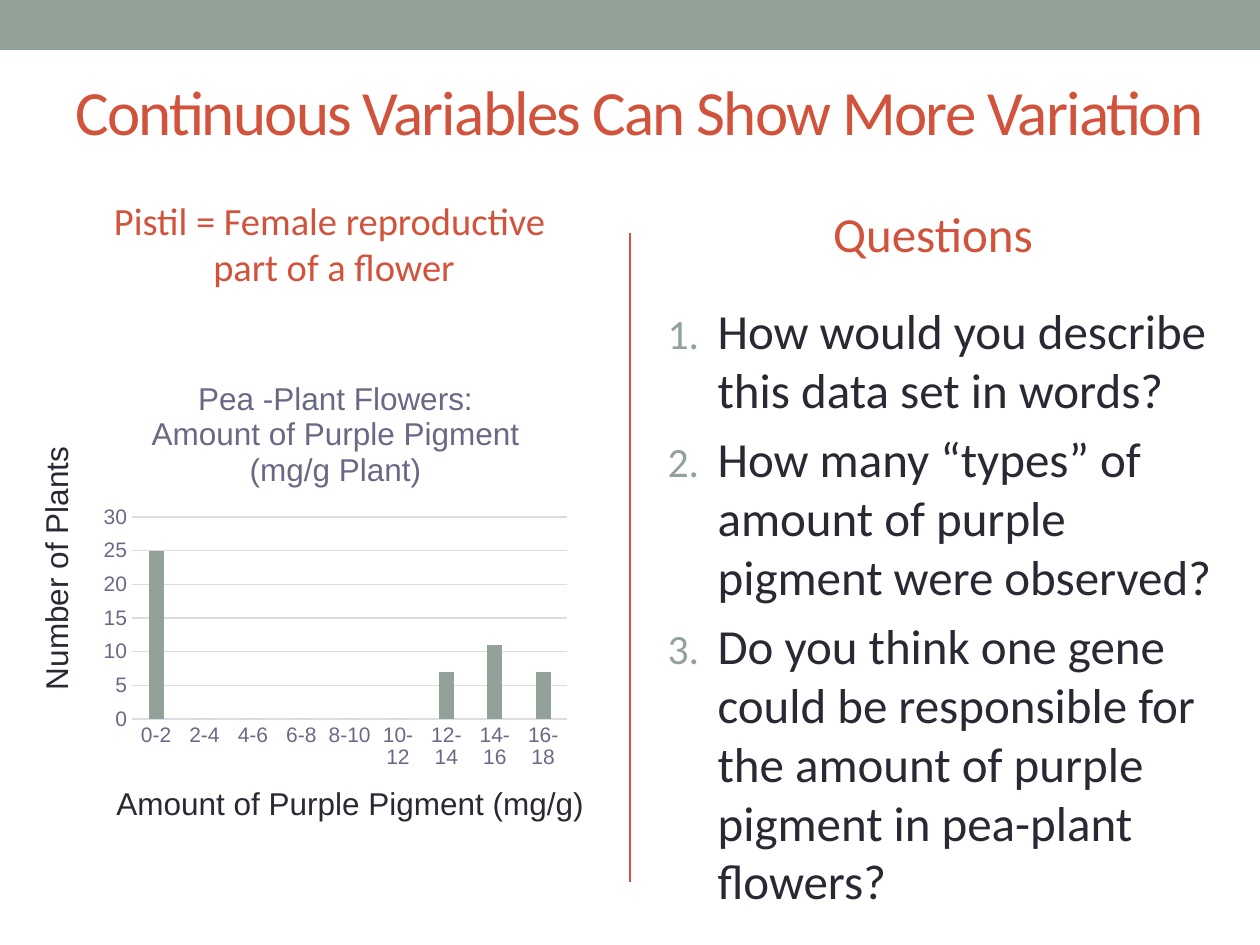
from lxml import etree
from pptx import Presentation
from pptx import util as u
from pptx.chart import data
from pptx.dml.color import RGBColor
from pptx.enum import chart as ch
from pptx.enum import shapes, text
from pptx.oxml import ns

SCALE = 914400 / 126
SAGE = RGBColor(0x93, 0xA2, 0x99)
RUST = RGBColor(0xD2, 0x53, 0x3C)
INK = RGBColor(0x29, 0x29, 0x34)
SLATE = RGBColor(0x69, 0x69, 0x86)
MIST = RGBColor(0xDC, 0xDC, 0xE3)

QUESTIONS = [
    "How would you describe this data set in words?",
    "How many “types” of amount of purple pigment were observed?",
    "Do you think one gene could be responsible for the amount of purple pigment in pea-plant flowers?",
]
RANGES = ["0-2", "2-4", "4-6", "6-8", "8-10", "10-12", "12-14", "14-16", "16-18"]
PLANTS = [25, 0, 0, 0, 0, 0, 7, 11, 7]


def px(n):
    return u.Emu(round(n * SCALE))


def set_all(target, **formats):
    for key, value in formats.items():
        setattr(target, key, value)


def place(shape, box):
    set_all(shape, **dict(zip(("left", "top", "width", "height"), map(px, box))))


def style(font, size, color, name="Calibri"):
    set_all(font, name=name, size=u.Pt(size), bold=False)
    font.color.rgb = color


def add_xml(parent, tag, **attributes):
    return etree.SubElement(parent, ns.qn(tag), attributes)


def draw_band(slide, box):
    band = slide.shapes.add_shape(shapes.MSO_SHAPE.RECTANGLE, *map(px, box))
    band.shadow.inherit = False
    band.fill.solid()
    band.fill.fore_color.rgb = SAGE
    band.line.fill.background()


def draw_divider(slide, x, top, bottom):
    divider = slide.shapes.add_connector(
        shapes.MSO_CONNECTOR.STRAIGHT, px(x), px(top), px(x), px(bottom))
    divider.line.color.rgb = RUST
    divider.line.width = u.Pt(1.5)
    add_xml(divider._element.spPr, "a:effectLst")


def fill_heading(heading, box, words, size, align, spacing=None):
    place(heading, box)
    frame = heading.text_frame
    frame.text = words
    set_all(frame, word_wrap=True, auto_size=text.MSO_AUTO_SIZE.NONE,
            vertical_anchor=text.MSO_ANCHOR.MIDDLE)
    paragraph = frame.paragraphs[0]
    set_all(paragraph, alignment=align, space_before=u.Pt(0))
    for run in paragraph.runs:
        style(run.font, size, RUST)
        if spacing:
            run.font._element.set("spc", str(spacing))


def fill_questions(body, box):
    place(body, box)
    frame = body.text_frame
    frame.text = "\n".join(QUESTIONS)
    set_all(frame, word_wrap=True, auto_size=text.MSO_AUTO_SIZE.NONE,
            vertical_anchor=text.MSO_ANCHOR.TOP)
    indent = px(50)
    for i, paragraph in enumerate(frame.paragraphs):
        properties = paragraph._p.get_or_add_pPr()
        properties.set("marL", str(indent))
        properties.set("indent", str(-indent))
        add_xml(add_xml(properties, "a:buClr"), "a:srgbClr", val=str(SAGE))
        add_xml(properties, "a:buSzPct", val="85000")
        add_xml(properties, "a:buFont", typeface="Calibri")
        add_xml(properties, "a:buAutoNum", type="arabicPeriod")
        paragraph.space_before = u.Pt(6 if i else 0)
        style(paragraph.runs[0].font, 28, INK)


def add_axis_label(slide, box, words, rotation=0):
    label = slide.shapes.add_textbox(*map(px, box))
    label.rotation = rotation
    label.text_frame.text = words
    label.text_frame.word_wrap = False
    style(label.text_frame.paragraphs[0].runs[0].font, 18, INK, "Arial")


def draw_histogram(slide, box):
    left, top, width, height = box
    counts = data.CategoryChartData()
    counts.categories = RANGES
    counts.add_series("Series 1", PLANTS)
    chart = slide.shapes.add_chart(
        ch.XL_CHART_TYPE.COLUMN_CLUSTERED, *map(px, box), counts).chart
    style(chart.font, 10, INK, "Arial")
    set_all(chart, has_legend=False, has_title=True)
    chart.chart_title.include_in_layout = False
    caption = chart.chart_title.text_frame
    caption.text = "Pea -Plant Flowers: Amount of Purple Pigment (mg/g Plant)"
    style(caption.paragraphs[0].runs[0].font, 18, SLATE, "Arial")

    plot = chart.plots[0]
    set_all(plot, gap_width=219, overlap=-27, vary_by_categories=False)
    plot.series[0].format.fill.solid()
    plot.series[0].format.fill.fore_color.rgb = SAGE

    ranges, plants = chart.category_axis, chart.value_axis
    for axis in (ranges, plants):
        set_all(axis, major_tick_mark=ch.XL_TICK_MARK.NONE,
                minor_tick_mark=ch.XL_TICK_MARK.NONE)
        style(axis.tick_labels.font, 12, SLATE, "Arial")
    set_all(plants, minimum_scale=0, maximum_scale=30, major_unit=5,
            has_major_gridlines=True)
    plants.format.line.fill.background()
    for line in (ranges.format.line, plants.major_gridlines.format.line):
        line.color.rgb = MIST
        line.width = u.Pt(0.75)

    add_axis_label(slide, (left - 174, top + 185, 271, 50), "Number of Plants", 270)
    add_axis_label(slide, (left + 10, top + height + 1, 498, 50),
                   "Amount of Purple Pigment (mg/g)")


def main():
    deck = Presentation()
    set_all(deck, slide_width=px(1260), slide_height=px(945))
    slide = deck.slides.add_slide(deck.slide_layouts[4])
    title, pistil, unused, heading, questions = slide.placeholders
    unused._element.getparent().remove(unused._element)

    draw_band(slide, (0, 0, 1260, 50))
    draw_divider(slide, 630, 233, 882)
    fill_heading(title, (63, 42, 1155, 136),
                 "Continuous Variables Can Show More Variation",
                 36, text.PP_ALIGN.LEFT, -100)
    fill_heading(pistil, (63, 199, 542, 88),
                 "Pistil = Female reproductive \vpart of a flower",
                 22, text.PP_ALIGN.CENTER)
    fill_heading(heading, (662, 189, 542, 88), "Questions", 28, text.PP_ALIGN.CENTER)
    fill_questions(questions, (655, 294, 573, 608))
    draw_histogram(slide, (94, 357, 483, 420))
    deck.save("out.pptx")


if __name__ == "__main__":
    main()
